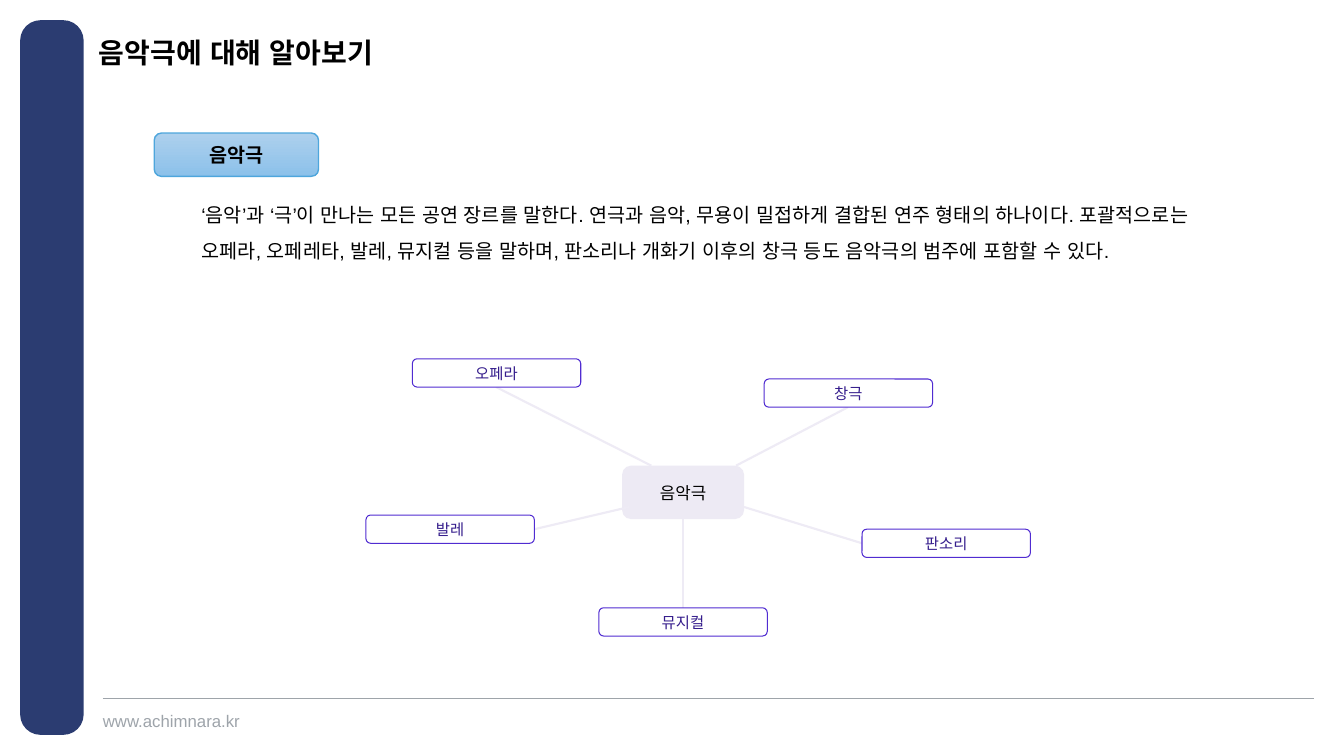
from dataclasses import dataclass

from lxml import etree
from pptx import Presentation
from pptx.dml.color import RGBColor
from pptx.enum import shapes, text
from pptx.oxml.ns import qn
from pptx.util import Inches, Pt


@dataclass(frozen=True)
class Theme:
    latin: str = "Arial"
    korean: str = "Noto Sans CJK KR"
    navy: str = "2B3C71"
    grey: str = "9EA4AA"
    black: str = "000000"
    white: str = "FFFFFF"
    hub: str = "DCD6EA"
    spoke: str = "EEEBF5"
    branch_line: str = "502CD1"
    branch_text: str = "351D8C"
    label_line: str = "4EA6DC"
    label_top: str = "ADD0ED"
    label_bottom: str = "8CC1EA"
    title_size: int = 20
    body_size: int = 14
    small_size: int = 12
    branch_size: int = 11


THEME = Theme()
BRANCH_W, BRANCH_H = 1.67, 0.28

# Branch name, left, top, spoke start at the hub, spoke end at the branch
BRANCHES = [
    ("오페라", 4.09, 3.56, (6.46, 4.62), (4.92, 3.84)),
    ("창극", 7.58, 3.76, (7.3, 4.62), (8.41, 4.04)),
    ("판소리", 8.55, 5.25, (7.38, 5.03), (8.55, 5.39)),
    ("발레", 3.63, 5.11, (6.24, 5.03), (5.3, 5.25)),
    ("뮤지컬", 5.94, 6.03, (6.77, 5.15), (6.77, 6.03)),
]


def rgb(value):
    return RGBColor.from_string(value)


def write(sp, content, size, color, font, bold=False, spacing=None, align=None):
    tf = sp.text_frame
    tf.word_wrap = True
    p = tf.paragraphs[0]
    p.text = content
    p.alignment = align
    p.line_spacing = spacing
    p.font.size = Pt(size)
    p.font.name = font
    p.font.bold = bold
    p.font.color.rgb = rgb(color)
    # Same typeface for East Asian characters and quotation marks
    etree.SubElement(p._p.pPr.find(qn("a:defRPr")), qn("a:ea"), typeface=font)
    return tf


def no_insets(tf):
    tf.margin_left = tf.margin_right = tf.margin_top = tf.margin_bottom = 0


def add_text(s, box, *args, **kwargs):
    sp = s.shapes.add_textbox(*map(Inches, box))
    return write(sp, *args, **kwargs)


def add_box(s, box, fill=None, line=None, width=1):
    sp = s.shapes.add_shape(shapes.MSO_SHAPE.ROUNDED_RECTANGLE, *map(Inches, box))
    sp.shadow.inherit = False
    if fill:
        sp.fill.solid()
        sp.fill.fore_color.rgb = rgb(fill)
    if line:
        sp.line.color.rgb = rgb(line)
        sp.line.width = Pt(width)
    else:
        sp.line.fill.background()
    return sp


def add_label(sp, content, size, color, bold=False):
    tf = write(sp, content, size, color, THEME.korean, bold,
               align=text.PP_ALIGN.CENTER)
    tf.vertical_anchor = text.MSO_ANCHOR.MIDDLE


def add_line(s, start, end, color, width):
    c = s.shapes.add_connector(shapes.MSO_CONNECTOR.STRAIGHT,
                               *map(Inches, (*start, *end)))
    c.line.color.rgb = rgb(color)
    c.line.width = Pt(width)
    etree.SubElement(c._element.spPr, qn("a:effectLst"))


def set_alpha(sp, percent):
    color = sp._element.spPr.find(qn("a:solidFill"))[0]
    etree.SubElement(color, qn("a:alpha"), val=str(percent * 1000))


def set_gradient(sp, top, bottom):
    sp.fill.gradient()
    sp.fill.gradient_angle = 270
    for stop, color in zip(sp.fill.gradient_stops, (top, bottom)):
        stop.color.rgb = rgb(color)


def add_frame(s):
    bar = add_box(s, (0.2, 0.2, 0.63, 7.09), THEME.navy)
    bar.adjustments[0] = 0.32
    add_line(s, (1.02, 6.93), (13.03, 6.93), THEME.grey, 0.5)
    no_insets(add_text(s, (1.02, 7.05, 1.5, 0.2), "www.achimnara.kr",
                       THEME.small_size, THEME.grey, THEME.latin))


def add_title(s, content):
    sp = s.shapes.title
    sp.left, sp.top, sp.width, sp.height = map(Inches, (0.98, 0.4, 7.87, 0.28))
    tf = write(sp, content, THEME.title_size, THEME.black, THEME.latin, True,
               spacing=0.9, align=text.PP_ALIGN.LEFT)
    tf.vertical_anchor = text.MSO_ANCHOR.MIDDLE
    no_insets(tf)


def add_mind_map(s):
    hub = add_box(s, (6.17, 4.62, 1.21, 0.53), THEME.hub)
    set_alpha(hub, 50)
    add_label(hub, "음악극", THEME.small_size, THEME.black)
    for name, left, top, start, end in BRANCHES:
        add_line(s, start, end, THEME.spoke, 1.5)
        branch = add_box(s, (left, top, BRANCH_W, BRANCH_H), THEME.white,
                         THEME.branch_line, 0.75)
        add_label(branch, name, THEME.branch_size, THEME.branch_text)


def main():
    prs = Presentation()
    prs.slide_width, prs.slide_height = Inches(13.33), Inches(7.5)
    s = prs.slides.add_slide(prs.slide_layouts[5])

    # Side bar, footer and title
    add_frame(s)
    add_title(s, "음악극에 대해 알아보기")

    # Definition
    add_text(s, (1.9, 1.85, 10.57, 0.76),
             "‘음악’과 ‘극’이 만나는 모든 공연 장르를 말한다. 연극과 음악, "
             "무용이 밀접하게 결합된 연주 형태의 하나이다. 포괄적으로는 오페라, "
             "오페레타, 발레, 뮤지컬 등을 말하며, 판소리나 개화기 이후의 창극 "
             "등도 음악극의 범주에 포함할 수 있다.",
             THEME.body_size, THEME.black, THEME.latin, spacing=1.5)
    term = add_box(s, (1.53, 1.32, 1.63, 0.43), line=THEME.label_line)
    set_gradient(term, THEME.label_top, THEME.label_bottom)
    add_label(term, "음악극", THEME.body_size, THEME.black, bold=True)

    # Genres around the term
    add_mind_map(s)
    prs.save("out.pptx")


if __name__ == "__main__":
    main()
